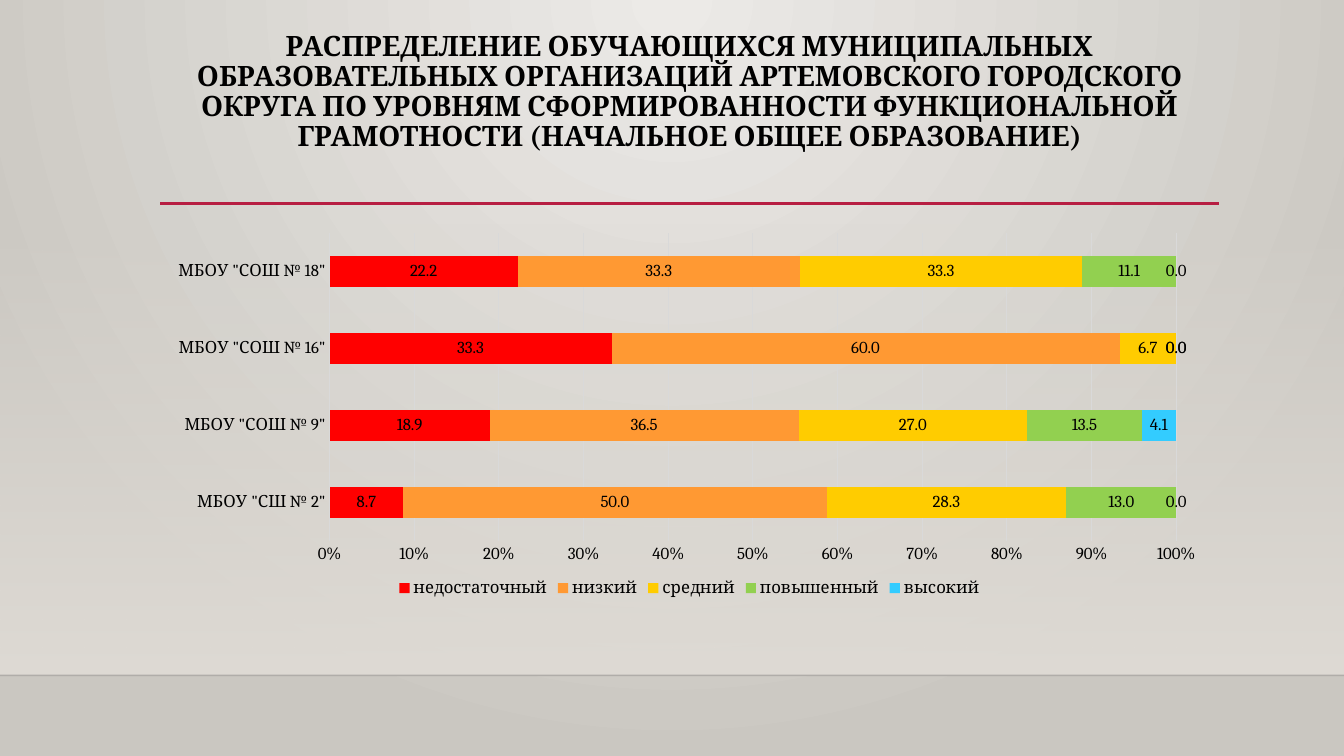
import pptx
import pptx.util
import pptx.chart.data
import pptx.dml.color
import pptx.enum.chart
import pptx.enum.shapes
import pptx.enum.text
import pptx.oxml
import pptx.oxml.ns

Pt = pptx.util.Pt
rgb = pptx.dml.color.RGBColor.from_string
qn = pptx.oxml.ns.qn

theme = {
    "font": "Cambria", "title_size": Pt(20), "chart_size": Pt(12),
    "text": "000000", "accent": "B71E42", "grid": "D9D9D9",
    "light": "ECEAE7", "dark": "CAC7C1", "wall": "DFDBD5", "edge": "000001",
}
LEFT, WIDTH = 114.5, 756


def style_font(font, size):
    font.name = theme["font"]
    font.size = size
    font.color.rgb = rgb(theme["text"])


def set_alpha(color_element, percent):
    alpha = color_element.makeelement(qn("a:alpha"), {"val": str(percent * 1000)})
    color_element.append(alpha)


deck = pptx.Presentation()
deck.slide_width, deck.slide_height = Pt(960), Pt(540)
slide = deck.slides.add_slide(deck.slide_layouts[6])

# Background: radial glow from the top centre
backdrop = slide.background.fill
backdrop.gradient()
for stop, tone in zip(backdrop.gradient_stops, ("light", "dark")):
    stop.color.rgb = rgb(theme[tone])
linear = slide.element.xpath("./p:cSld/p:bg//a:lin")[0]
glow = pptx.oxml.parse_xml(
    '<a:path xmlns:a="http://schemas.openxmlformats.org/drawingml/2006/main" path="circle">'
    '<a:fillToRect l="43000" t="0" r="43000" b="100000"/></a:path>')
linear.getparent().replace(linear, glow)

# Wall fading in towards the floor
wall = slide.shapes.add_shape(
    pptx.enum.shapes.MSO_SHAPE.RECTANGLE, Pt(0), Pt(159), Pt(960), Pt(323.4))
wall.shadow.inherit = False
wall.line.fill.background()
wall.fill.gradient()
wall.fill.gradient_angle = 270
for stop in wall.fill.gradient_stops:
    stop.color.rgb = rgb(theme["wall"])
set_alpha(wall.element.xpath("./p:spPr/a:gradFill//a:srgbClr")[0], 0)

# Floor edge and title rule
for x1, x2, y, tone, weight, opacity in (
    (0, 960, 482.4, "edge", 1, 20),
    (LEFT, 871, 145.4, "accent", 2.5, 100),
):
    rule = slide.shapes.add_connector(
        pptx.enum.shapes.MSO_CONNECTOR.STRAIGHT, Pt(x1), Pt(y), Pt(x2), Pt(y))
    rule.line.color.rgb = rgb(theme[tone])
    rule.line.width = Pt(weight)
    properties = rule.element.spPr
    properties.append(properties.makeelement(qn("a:effectLst"), {}))
    if opacity < 100:
        set_alpha(properties.xpath("./a:ln//a:srgbClr")[0], opacity)

# Title
title = slide.shapes.add_textbox(Pt(LEFT), Pt(19.4), Pt(WIDTH), Pt(105)).text_frame
title.word_wrap = True
title.text = (
    "РАСПРЕДЕЛЕНИЕ ОБУЧАЮЩИХСЯ МУНИЦИПАЛЬНЫХ ОБРАЗОВАТЕЛЬНЫХ ОРГАНИЗАЦИЙ "
    "АРТЕМОВСКОГО ГОРОДСКОГО ОКРУГА ПО УРОВНЯМ СФОРМИРОВАННОСТИ "
    "ФУНКЦИОНАЛЬНОЙ ГРАМОТНОСТИ (НАЧАЛЬНОЕ ОБЩЕЕ ОБРАЗОВАНИЕ)")
heading = title.paragraphs[0]
heading.alignment = pptx.enum.text.PP_ALIGN.CENTER
heading.line_spacing = 0.9
style_font(heading.runs[0].font, theme["title_size"])
heading.runs[0].font.bold = True

# Shares of pupils by level and school
levels = (
    ("недостаточный", "FF0000", (8.7, 18.9, 33.3, 22.2)),
    ("низкий", "FF9933", (50, 36.5, 60, 33.3)),
    ("средний", "FFCC00", (28.3, 27, 6.7, 33.3)),
    ("повышенный", "92D050", (13, 13.5, 0, 11.1)),
    ("высокий", "33CCFF", (0, 4.1, 0, 0)),
)
shares = pptx.chart.data.CategoryChartData(number_format="0.0")
shares.categories = ['МБОУ "СШ № 2"', 'МБОУ "СОШ № 9"', 'МБОУ "СОШ № 16"', 'МБОУ "СОШ № 18"']
for level, color, values in levels:
    shares.add_series(level, values)
chart = slide.shapes.add_chart(
    pptx.enum.chart.XL_CHART_TYPE.BAR_STACKED_100,
    Pt(LEFT), Pt(158.4), Pt(WIDTH), Pt(271.4), shares).chart
style_font(chart.font, theme["chart_size"])
chart.has_title = False

# Bars and their values
bars = chart.plots[0]
bars.gap_width, bars.overlap = 150, 100
bars.vary_by_categories = False
for series, (level, color, values) in zip(bars.series, levels):
    series.format.fill.solid()
    series.format.fill.fore_color.rgb = rgb(color)
    labels = series.data_labels
    labels.show_value = True
    labels.number_format, labels.number_format_is_linked = "0.0", False
    style_font(labels.font, theme["chart_size"])

# Axes
schools, percents = chart.category_axis, chart.value_axis
for axis in (schools, percents):
    axis.major_tick_mark = axis.minor_tick_mark = pptx.enum.chart.XL_TICK_MARK.NONE
    style_font(axis.tick_labels.font, theme["chart_size"])
percents.has_major_gridlines = True
for line in (schools.format.line, percents.major_gridlines.format.line):
    line.color.rgb = rgb(theme["grid"])
    line.width = Pt(0.75)
percents.format.line.fill.background()
percents.minimum_scale, percents.maximum_scale, percents.major_unit = 0, 1, 0.1
percents.tick_labels.number_format = "0%"
percents.tick_labels.number_format_is_linked = False

# Legend
chart.has_legend = True
chart.legend.position = pptx.enum.chart.XL_LEGEND_POSITION.BOTTOM
chart.legend.include_in_layout = False
style_font(chart.legend.font, theme["chart_size"])

# Plot area position as fractions of the chart
plot_area = chart.element.xpath("./c:chart/c:plotArea")[0]
for old_layout in plot_area.findall(qn("c:layout")):
    plot_area.remove(old_layout)
layout = plot_area.makeelement(qn("c:layout"), {})
plot_area.insert(0, layout)
manual = layout.makeelement(qn("c:manualLayout"), {})
layout.append(manual)
for tag, value in (
    ("layoutTarget", "inner"), ("xMode", "edge"), ("yMode", "edge"),
    ("x", 0.16), ("y", 0.03), ("w", 0.8), ("h", 0.81),
):
    manual.append(manual.makeelement(qn("c:" + tag), {"val": str(value)}))

deck.save("out.pptx")
